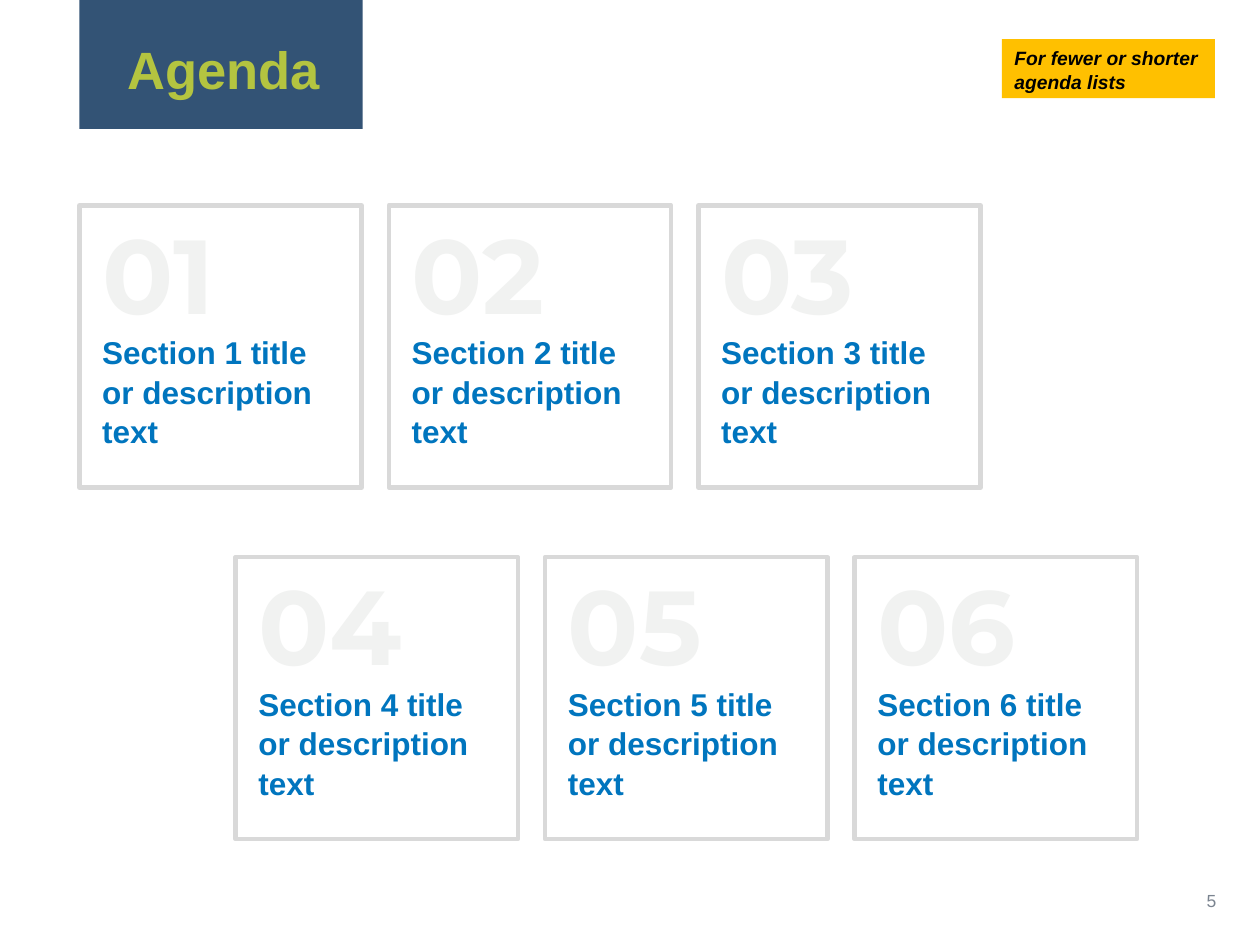
from pptx import Presentation
from pptx.dml.color import RGBColor
from pptx.enum.shapes import MSO_SHAPE
from pptx.enum.text import MSO_ANCHOR, MSO_AUTO_SIZE, PP_ALIGN
from pptx.util import Cm, Pt

NAVY = RGBColor(0x33, 0x53, 0x75)
LIME = RGBColor(0xB4, 0xC4, 0x40)
AMBER = RGBColor(0xFF, 0xC0, 0x00)
BLUE = RGBColor(0x00, 0x75, 0xBE)
BLACK = RGBColor(0x00, 0x00, 0x00)
SLATE = RGBColor(0x7B, 0x84, 0x90)
PALE_GREY = RGBColor(0xF1, 0xF2, 0xF1)
BORDER_GREY = RGBColor(0xD9, 0xD9, 0xD9)

CARD_SIZE = Cm(5.69)
CARD_PITCH = Cm(6.24)
CARDS_PER_ROW = 3
ROW_ORIGINS = [(Cm(1.6), Cm(4.14)), (Cm(4.75), Cm(11.23))]


def add_rectangle(slide, left, top, width, height, fill=None, line=None):
    shape = slide.shapes.add_shape(MSO_SHAPE.RECTANGLE, left, top, width, height)
    shape.shadow.inherit = False
    if fill is None:
        shape.fill.background()
    else:
        shape.fill.solid()
        shape.fill.fore_color.rgb = fill
    if line is None:
        shape.line.fill.background()
    else:
        shape.line.color.rgb = line
        shape.line.width = Pt(2.5)
    return shape


def write_text(shape, text, size, color, font="Arial", bold=True, italic=False,
               align=PP_ALIGN.LEFT, anchor=MSO_ANCHOR.TOP, spacing=1.0):
    frame = shape.text_frame
    frame.word_wrap = True
    frame.auto_size = MSO_AUTO_SIZE.NONE
    frame.vertical_anchor = anchor
    paragraph = frame.paragraphs[0]
    paragraph.alignment = align
    paragraph.line_spacing = spacing
    run = paragraph.add_run()
    run.text = text
    run.font.name = font
    run.font.size = Pt(size)
    run.font.bold = bold
    run.font.italic = italic
    run.font.color.rgb = color


def add_heading(slide, left, top, width, height):
    band = add_rectangle(slide, left, top, width, height, fill=NAVY)
    title = slide.shapes.title
    title.element.addprevious(band.element)
    title.left, title.top = left + Cm(0.71), top + Cm(0.61)
    title.width, title.height = Cm(4.85), Cm(1.55)
    write_text(title, "Agenda", 30, LIME)


def add_card(slide, left, top, size, number):
    add_rectangle(slide, left, top, size, size, line=BORDER_GREY)
    text_left = left + Cm(0.21)
    numeral = slide.shapes.add_textbox(text_left, top - Cm(0.05), Cm(3.91), Cm(2.82))
    write_text(numeral, f"{number:02d}", 60, PALE_GREY, font="Montserrat")
    caption = slide.shapes.add_textbox(text_left, top + Cm(2.41), Cm(4.85), Cm(2.57))
    write_text(caption, f"Section {number} title or description text", 18, BLUE,
               spacing=1.05)


def add_card_rows(slide):
    for row, (left, top) in enumerate(ROW_ORIGINS):
        for column in range(CARDS_PER_ROW):
            number = row * CARDS_PER_ROW + column + 1
            add_card(slide, left + column * CARD_PITCH, top, CARD_SIZE, number)


def add_hint(slide, left, top, width, height):
    hint = add_rectangle(slide, left, top, width, height, fill=AMBER)
    write_text(hint, "For fewer or shorter agenda lists", 11, BLACK,
               italic=True, spacing=1.05)


def add_page_number(slide, left, top, width, height):
    box = slide.shapes.add_textbox(left, top, width, height)
    write_text(box, "5", 10, SLATE, bold=False, align=PP_ALIGN.RIGHT,
               anchor=MSO_ANCHOR.MIDDLE)


def main():
    presentation = Presentation()
    presentation.slide_width = Cm(25.4)
    presentation.slide_height = Cm(19.05)
    title_only = presentation.slide_layouts.get_by_name("Title Only")
    slide = presentation.slides.add_slide(title_only)
    add_heading(slide, Cm(1.6), Cm(0), Cm(5.71), Cm(2.6))
    add_card_rows(slide)
    add_page_number(slide, Cm(19.05), Cm(17.65), Cm(5.72), Cm(1.02))
    add_hint(slide, Cm(20.2), Cm(0.79), Cm(4.29), Cm(1.19))
    presentation.save("out.pptx")


if __name__ == "__main__":
    main()
